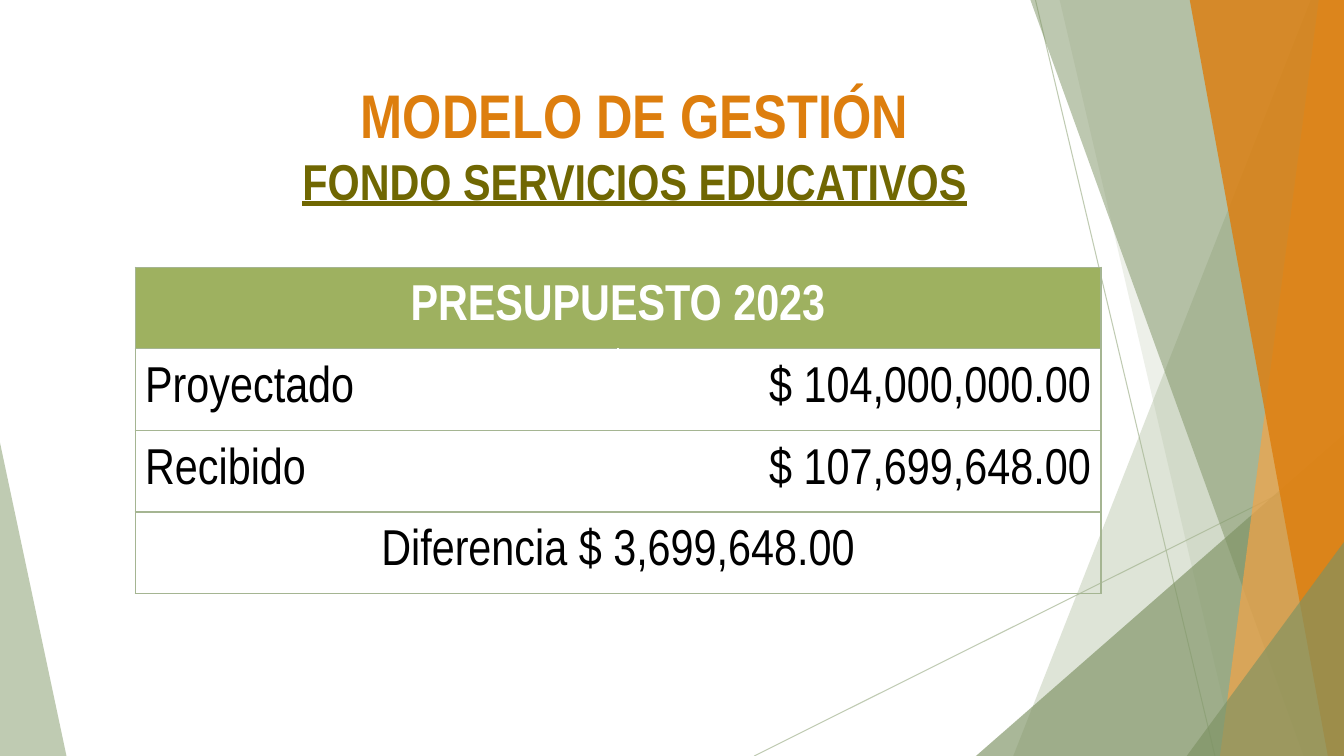
from lxml.etree import SubElement
from pptx import Presentation
from pptx.dml.color import RGBColor
from pptx.enum.shapes import MSO_CONNECTOR as Connector
from pptx.enum.text import MSO_ANCHOR as Anchor, PP_ALIGN as Align
from pptx.oxml.ns import qn
from pptx.util import Inches, Pt

FONT = "Arial Narrow"
SAGE, DARK_SAGE = "A5B592", "7D9263"
ORANGE, LIGHT_ORANGE = "DD7E0E", "F3A447"
OLIVE, HEADER_GREEN = "706702", "9EB160"
WHITE, BLACK = "FFFFFF", "000000"


def paint(color_format, color, opacity=100):
    color_format.rgb = RGBColor.from_string(color)
    if opacity < 100:
        for element in color_format._xFill.iter(qn("a:srgbClr")):
            SubElement(element, qn("a:alpha"), val=str(opacity * 1000))


def format_run(run, size, color, bold):
    run.font.name = FONT
    run.font.size = Pt(size)
    run.font.bold = bold
    paint(run.font.color, color)


presentation = Presentation()
presentation.slide_width = Inches(13.33)
presentation.slide_height = Inches(7.5)
slide = presentation.slides.add_slide(presentation.slide_layouts[5])

for start, end in [((7.48, 7.5), (13.35, 4.57)), ((10.27, 0), (12.05, 7.5))]:
    line = slide.shapes.add_connector(
        Connector.STRAIGHT, *[Inches(value) for value in start + end])
    line.line.width = Pt(0.75)
    line.line.fill.solid()
    paint(line.line.fill.fore_color, SAGE, 70)
    SubElement(line._element.spPr, qn("a:effectLst"))

facets = [
    ([(0, 4.39), (0.66, 7.5), (0, 7.5)], SAGE, 70),
    ([(13, 0), (10.05, 7.5), (13.35, 7.5), (13.35, 0)], SAGE, 36),
    ([(10.51, 0), (12.26, 7.5), (13.35, 7.5), (13.35, 0)], SAGE, 20),
    ([(9.68, 7.5), (13.35, 4.29), (13.35, 7.5)], DARK_SAGE, 66),
    ([(10.22, 0), (12.93, 7.5), (13.35, 7.5), (13.35, 0)], DARK_SAGE, 50),
    ([(13.08, 0), (12.1, 7.5), (13.35, 7.5), (13.35, 0)], LIGHT_ORANGE, 70),
    ([(11.8, 0), (13.17, 7.5), (13.35, 7.5), (13.35, 0)], ORANGE, 82),
    ([(11.77, 7.5), (13.35, 5.35), (13.35, 7.5)], DARK_SAGE, 66),
]
for corners, color, opacity in facets:
    points = [(Inches(x), Inches(y)) for x, y in corners]
    builder = slide.shapes.build_freeform(*points[0])
    builder.add_line_segments(points[1:], close=True)
    facet = builder.convert_to_shape()
    facet.shadow.inherit = False
    facet.fill.solid()
    paint(facet.fill.fore_color, color, opacity)
    facet.line.fill.background()

title = slide.shapes.title
title.left, title.top = Inches(1.15), Inches(0.66)
title.width, title.height = Inches(10.29), Inches(1.53)
title.text_frame.text = "MODELO DE GESTIÓN\vFONDO SERVICIOS EDUCATIVOS"
title.text_frame.word_wrap = True
title.text_frame.vertical_anchor = Anchor.MIDDLE
paragraph = title.text_frame.paragraphs[0]
paragraph.alignment = Align.CENTER
heading, subheading = paragraph.runs
format_run(heading, 44, ORANGE, True)
format_run(subheading, 36, OLIVE, True)
subheading.font.underline = True

rows = [
    ["PRESUPUESTO 2023"],
    ["Proyectado", "$ 104,000,000.00"],
    ["Recibido", "$ 107,699,648.00"],
    ["Diferencia $ 3,699,648.00"],
]
table = slide.shapes.add_table(
    len(rows), 2, Inches(1.34), Inches(2.65), Inches(9.58), Inches(3.24)).table
for row_index, texts in enumerate(rows):
    merged = len(texts) == 1
    if merged:
        table.cell(row_index, 0).merge(table.cell(row_index, 1))
    for column_index in range(2):
        cell = table.cell(row_index, column_index)
        cell.vertical_anchor = Anchor.MIDDLE
        if row_index == 0:
            cell.fill.solid()
            paint(cell.fill.fore_color, HEADER_GREEN)
        else:
            cell.fill.background()

        sides = ["lnL", "lnR", "lnT", "lnB"]
        if not merged:
            sides.remove("lnR" if column_index == 0 else "lnL")
        properties = cell._tc.get_or_add_tcPr()
        for position, side in enumerate(sides):
            border = SubElement(properties, qn("a:" + side), w=str(Pt(1)))
            fill = SubElement(border, qn("a:solidFill"))
            SubElement(fill, qn("a:srgbClr"), val=SAGE)
            properties.insert(position, border)

        if column_index < len(texts):
            paragraph = cell.text_frame.paragraphs[0]
            paragraph.text = texts[column_index]
            paragraph.alignment = (
                Align.CENTER if merged else [Align.LEFT, Align.RIGHT][column_index])
            header = row_index == 0
            format_run(paragraph.runs[0], 36, WHITE if header else BLACK, header)

presentation.save("out.pptx")
